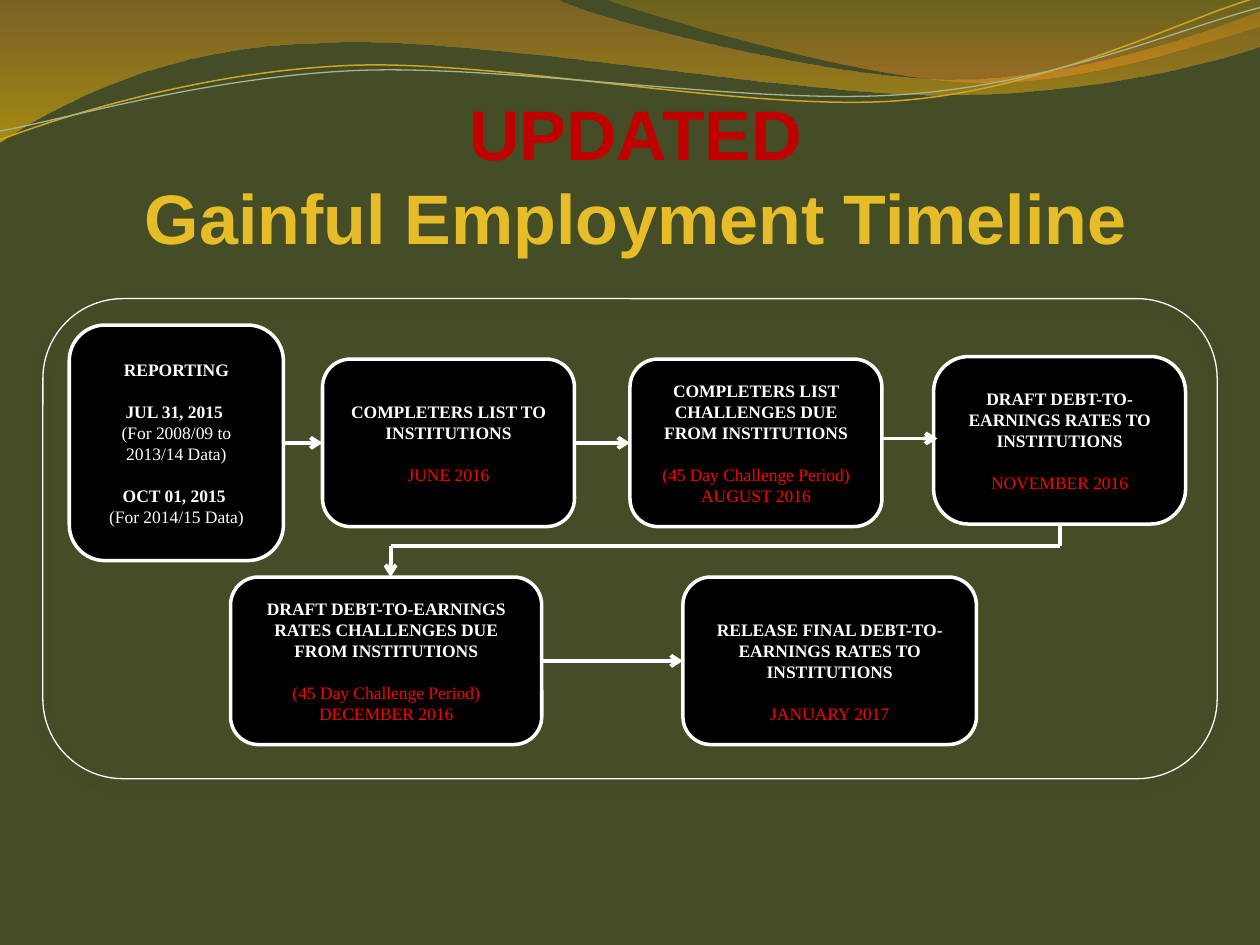
from dataclasses import dataclass, field
from typing import NamedTuple, Optional

from pptx import Presentation
from pptx.dml.color import RGBColor as RGB
from pptx.enum.shapes import MSO_CONNECTOR as Line, MSO_SHAPE as Shape
from pptx.enum.text import MSO_ANCHOR as Anchor, MSO_AUTO_SIZE as AutoSize, PP_ALIGN as Align
from pptx.oxml.ns import qn
from pptx.util import Inches, Pt
from lxml.etree import SubElement


@dataclass(frozen=True)
class Theme:
    background: RGB = RGB(0x44, 0x4D, 0x26)
    box: RGB = RGB(0, 0, 0)
    white: RGB = RGB(0xFF, 0xFF, 0xFF)
    date: RGB = RGB(0xFF, 0, 0)
    updated: RGB = RGB(0xC0, 0, 0)
    gold: RGB = RGB(0xE7, 0xBC, 0x29)
    title_font: str = "Arial"
    box_font: str = "Times New Roman"
    title_size: float = 40
    box_size: float = 10
    blank_line: float = 12


THEME = Theme()
TOP, LEFT, BOTTOM, RIGHT = range(4)


class Text(NamedTuple):
    text: str
    bold: bool = False
    color: RGB = THEME.white
    gap: bool = False  # one line of space above


@dataclass
class Step:
    left: float
    top: float
    width: float
    height: float
    texts: list
    corner: float = 0.167
    drop: float = 0  # extra inset above the text


class Stop(NamedTuple):
    position: float
    color: str
    alpha: int


@dataclass
class Wave:
    start: tuple
    curves: list  # six numbers: two control points and an end point
    edge: list = field(default_factory=list)  # straight part, then back along curves
    back: list = field(default_factory=list)
    stops: Optional[list] = None
    line: Optional[tuple] = None


WAVES = [
    Wave((4.4, -0.01), [(4.76, 0.17, 6.64, 0.63, 7.58, 0.63), (8.53, 0.63, 9.58, 0.26, 10, 0.09)],
         [(10.01, 0.36)],
         [(9.83, 0.44, 8.7, 0.76, 7.46, 0.75), (6.22, 0.75, 3.82, 0.28, 2.57, 0.34),
          (1.29, 0.36, 0.46, 0.83, -0.01, 1.13), (-0.01, 0.75, 0, 0.38, 0, 0)],
         stops=[Stop(0, "C07A28", 45), Stop(1, "F7BF00", 55)]),
    Wave((4.79, -0.01), [(5.09, 0.11, 6.82, 0.62, 7.69, 0.65), (8.56, 0.69, 9.61, 0.32, 10, 0.21)],
         [(10, 0)], stops=[Stop(0, "C09709", 30), Stop(0.8, "F59320", 45)]),
    Wave((0, 1.11), [(0.48, 0.93, 1.58, 0.57, 2.77, 0.52), (3.95, 0.47, 5.93, 0.89, 7.13, 0.8),
                     (8.33, 0.71, 9.38, 0.15, 9.98, -0.02)], line=("CCA624", 0.85)),
    Wave((0, 1.04), [(0.47, 0.96, 1.64, 0.61, 2.83, 0.56), (4.03, 0.51, 5.97, 0.84, 7.17, 0.75),
                     (8.36, 0.67, 9.41, 0.21, 10, 0.06)], line=("A5B592", 0.75)),
]

PERIOD = Text("(45 Day Challenge Period)", color=THEME.date, gap=True)
STEPS = {
    "reporting": Step(0.55, 2.58, 1.7, 1.87, [
        Text("REPORTING", True),
        Text("JUL 31, 2015 ", True, gap=True), Text("(For 2008/09 to 2013/14 Data)"),
        Text("OCT 01, 2015 ", True, gap=True), Text("(For 2014/15 Data)")]),
    "completers": Step(2.56, 2.85, 2, 1.33, [
        Text("COMPLETERS LIST TO INSTITUTIONS", True),
        Text("JUNE 2016", color=THEME.date, gap=True)]),
    "list challenges": Step(5, 2.85, 2, 1.33, [
        Text("COMPLETERS LIST CHALLENGES DUE FROM INSTITUTIONS", True),
        PERIOD, Text("AUGUST 2016", color=THEME.date)]),
    "draft rates": Step(7.41, 2.83, 2, 1.33, [
        Text("DRAFT DEBT-TO-EARNINGS RATES TO INSTITUTIONS", True),
        Text("NOVEMBER 2016", color=THEME.date, gap=True)], corner=0.209),
    "rate challenges": Step(1.83, 4.58, 2.47, 1.33, [
        Text("DRAFT DEBT-TO-EARNINGS RATES CHALLENGES DUE FROM INSTITUTIONS", True),
        PERIOD, Text("DECEMBER 2016", color=THEME.date)]),
    "final rates": Step(5.42, 4.58, 2.33, 1.33, [
        Text("RELEASE FINAL DEBT-TO-EARNINGS RATES TO INSTITUTIONS", True),
        Text("JANUARY 2017", color=THEME.date, gap=True)], drop=0.17),
}


def bend(segments: list) -> None:
    """Turn each three straight segments into one Bezier curve."""
    for triple in zip(*[iter(segments)] * 3):
        curve = triple[0]
        curve.tag = qn("a:cubicBezTo")
        for segment in triple[1:]:
            curve.append(segment[0])
            segment.getparent().remove(segment)


def draw_wave(slide, wave: Wave) -> None:
    out, back = ([curve[n:n + 2] for curve in curves for n in (0, 2, 4)]
                 for curves in (wave.curves, wave.back))
    points = [tuple(map(Inches, point)) for point in [wave.start] + out + wave.edge + back]
    builder = slide.shapes.build_freeform(*points[0])
    builder.add_line_segments(points[1:], close=wave.line is None)
    ribbon = builder.convert_to_shape()
    segments = list(ribbon.element.spPr.iter(qn("a:lnTo")))
    bend(segments[:len(out)])
    back_start = len(out) + len(wave.edge)
    bend(segments[back_start:back_start + len(back)])

    ribbon.shadow.inherit = False
    if wave.line:
        ribbon.fill.background()
        ribbon.line.color.rgb, ribbon.line.width = RGB.from_string(wave.line[0]), Pt(wave.line[1])
        return
    ribbon.line.fill.background()
    ribbon.fill.gradient()
    ribbon.fill.gradient_angle = 270
    for target, stop in zip(ribbon.fill.gradient_stops, wave.stops):
        target.position = stop.position
        target.color.rgb = RGB.from_string(stop.color)
    for color, stop in zip(ribbon.element.spPr.iter(qn("a:srgbClr")), wave.stops):
        SubElement(color, qn("a:alpha"), val=str(stop.alpha * 1000))


def style_paragraph(paragraph, font: str, size: float, bold: bool, color: RGB) -> None:
    paragraph.alignment = Align.CENTER
    for run in paragraph.runs:
        run.font.name, run.font.size = font, Pt(size)
        run.font.bold, run.font.color.rgb = bold, color


def round_box(slide, left: float, top: float, width: float, height: float, weight: float):
    box = slide.shapes.add_shape(Shape.ROUNDED_RECTANGLE, Inches(left), Inches(top),
                                 Inches(width), Inches(height))
    box.shadow.inherit = False
    box.line.color.rgb, box.line.width = THEME.white, Pt(weight)
    return box


def draw_frame(slide) -> None:
    frame = round_box(slide, 0.34, 2.37, 9.32, 3.81, 0.75)
    frame.fill.background()
    glow = SubElement(frame.element.spPr.find(qn("a:effectLst")), qn("a:outerShdw"),
                      blurRad=str(Pt(4.5)), dist=str(Pt(3)), dir="5400000", rotWithShape="0")
    color = SubElement(glow, qn("a:srgbClr"), val="3A4033")
    SubElement(color, qn("a:alpha"), val="48000")


def draw_step(slide, step: Step):
    box = round_box(slide, step.left, step.top, step.width, step.height, 2)
    box.adjustments[0] = step.corner
    box.fill.solid()
    box.fill.fore_color.rgb = THEME.box
    frame = box.text_frame
    frame.word_wrap, frame.vertical_anchor = True, Anchor.MIDDLE
    frame.margin_top = Inches(0.05 + step.drop)
    frame.text = "\n".join(item.text for item in step.texts)
    for paragraph, item in zip(frame.paragraphs, step.texts):
        style_paragraph(paragraph, THEME.box_font, THEME.box_size, item.bold, item.color)
        paragraph.space_before = Pt(THEME.blank_line if item.gap else 0)
    return box


def draw_line(slide, start: tuple = (0, 0), end: tuple = (0, 0), arrow: bool = True):
    line = slide.shapes.add_connector(Line.STRAIGHT, *map(Inches, start + end))
    line.line.color.rgb, line.line.width = THEME.white, Pt(2.25)
    if arrow:
        SubElement(line.element.spPr.find(qn("a:ln")), qn("a:tailEnd"), type="arrow")
    SubElement(line.element.spPr, qn("a:effectLst"))
    return line


def draw_title(slide) -> None:
    title = slide.shapes.title
    title.left, title.top, title.width, title.height = map(Inches, (0.92, 0.67, 8.25, 0.83))
    frame = title.text_frame
    frame.auto_size, frame.vertical_anchor, frame.word_wrap = AutoSize.NONE, Anchor.TOP, True
    frame.text = "UPDATED\nGainful Employment Timeline"
    for paragraph, color in zip(frame.paragraphs, (THEME.updated, THEME.gold)):
        style_paragraph(paragraph, THEME.title_font, THEME.title_size, True, color)


def main() -> None:
    deck = Presentation()
    deck.slide_width, deck.slide_height = Inches(10), Inches(7.5)
    slide = deck.slides.add_slide(deck.slide_layouts[5])
    slide.background.fill.solid()
    slide.background.fill.fore_color.rgb = THEME.background

    # Backdrop and title
    for wave in WAVES:
        draw_wave(slide, wave)
    draw_title(slide)

    # Timeline steps
    draw_frame(slide)
    boxes = {name: draw_step(slide, step) for name, step in STEPS.items()}

    # Arrows between neighbours
    for source, target in (("reporting", "completers"), ("completers", "list challenges"),
                           ("rate challenges", "final rates")):
        arrow = draw_line(slide)
        arrow.begin_connect(boxes[source], RIGHT)
        arrow.end_connect(boxes[target], LEFT)
    draw_line(slide, (7, 3.48), (7.44, 3.48))

    # Turn from the first row to the second
    descent = draw_line(slide, (8.41, 4.16), (8.41, 4.33), arrow=False)
    descent.begin_connect(boxes["draft rates"], BOTTOM)
    draw_line(slide, (8.41, 4.33), (3.1, 4.33), arrow=False)
    draw_line(slide, (3.1, 4.33), (3.1, 4.58))

    deck.save("out.pptx")


if __name__ == "__main__":
    main()
